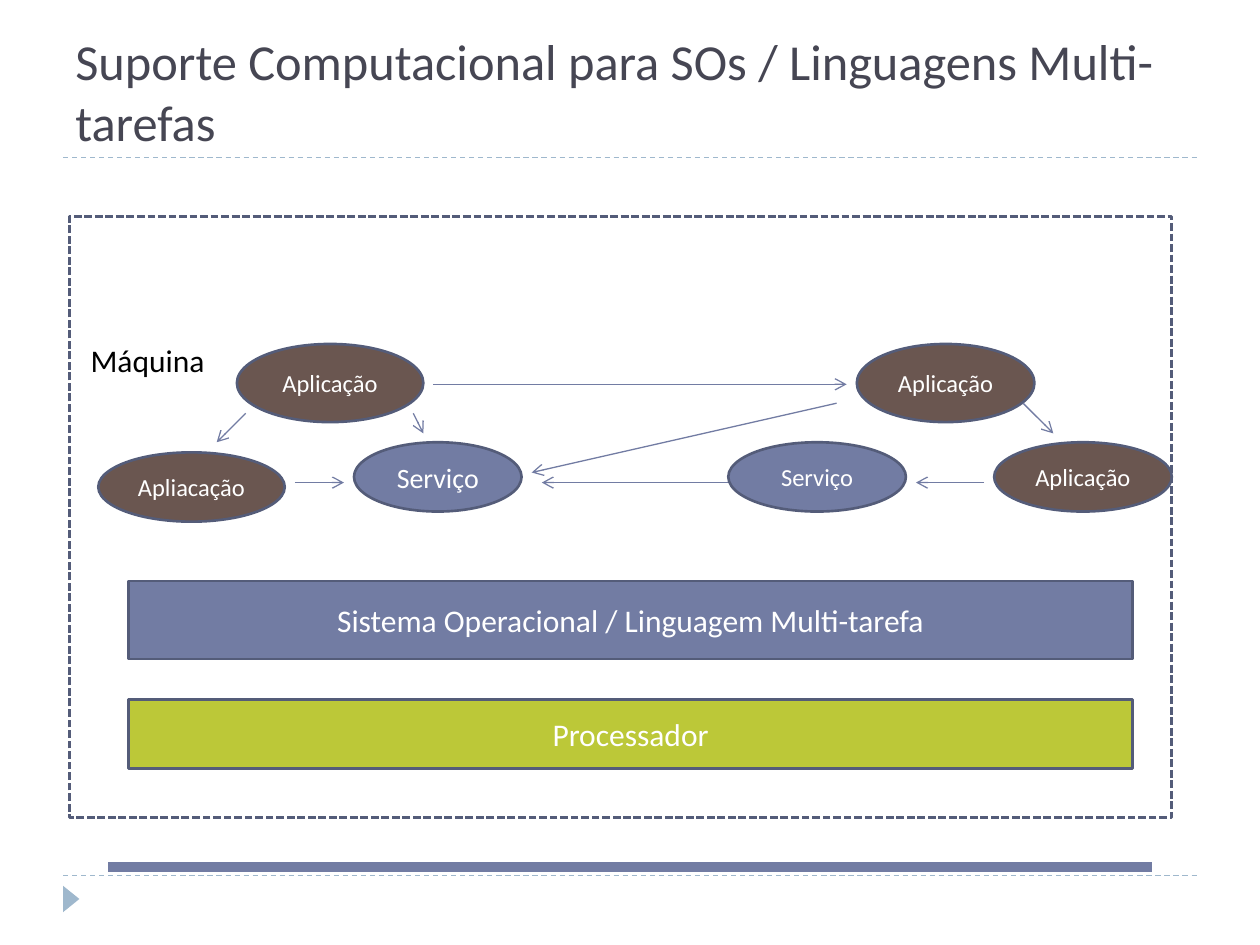
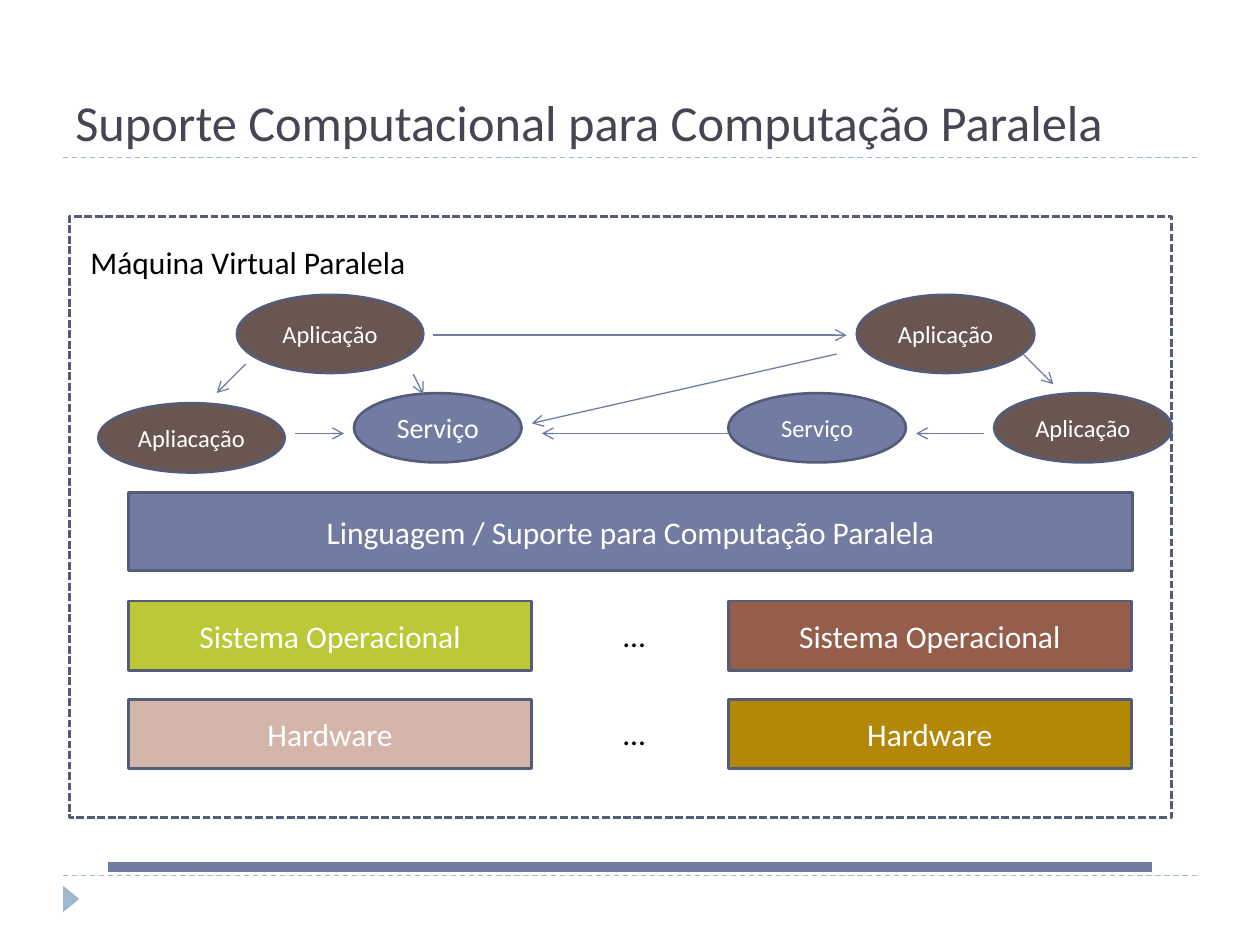
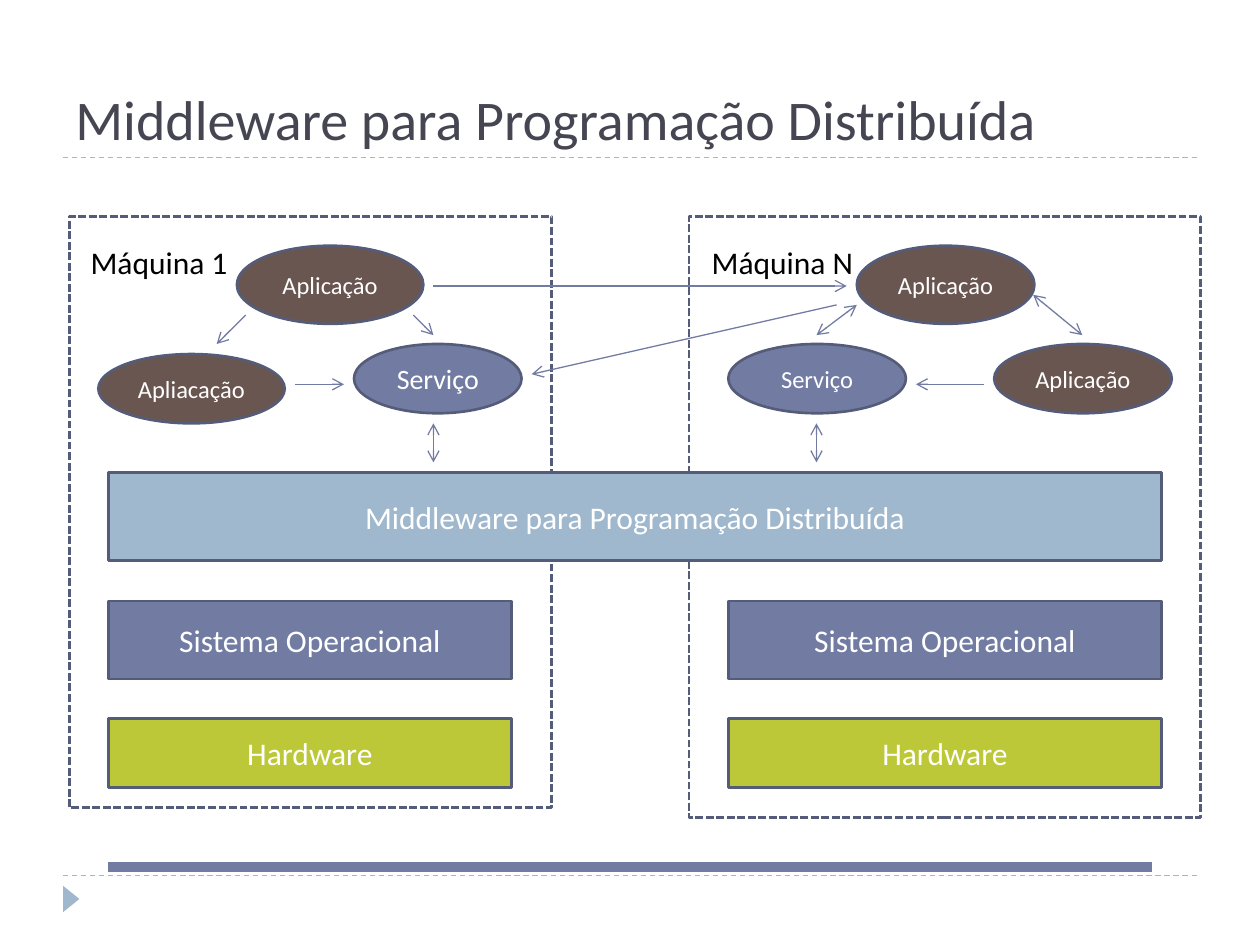
"""Build three slides on computing support for multitasking, parallel and distributed programs."""
from lxml.etree import SubElement
from pptx import Presentation
from pptx.dml.color import RGBColor
from pptx.enum.dml import MSO_LINE_DASH_STYLE as Dash
from pptx.enum.shapes import MSO_CONNECTOR, MSO_SHAPE as Preset
from pptx.enum.text import MSO_ANCHOR as Anchor, PP_ALIGN as Align
from pptx.oxml.ns import qn
from pptx.util import Inches, Pt

FONT = "Calibri"
COLORS = {
    "title": "464653",
    "text": "000000",
    "white": "FFFFFF",
    "outline": "545C79",
    "indigo": "727CA3",
    "sky": "9FB8CD",
    "lime": "BCC838",
    "brown": "6A5650",
    "rose": "D4B5AA",
    "rust": "955E4B",
    "gold": "B38807",
}


def add_box(slide, preset, bounds, fill=None, text="", size=18, color="white",
            outline="outline", dash=None, anchor=Anchor.MIDDLE):
    """Add a preset shape, or a plain text box when preset is None."""
    lengths = [Inches(value) for value in bounds]
    if preset is None:
        shape = slide.shapes.add_textbox(*lengths)
    else:
        shape = slide.shapes.add_shape(preset, *lengths)
        shape.shadow.inherit = False
        shape.fill.solid()
        shape.fill.fore_color.rgb = RGBColor.from_string(COLORS[fill])
        if outline:
            shape.line.color.rgb = RGBColor.from_string(COLORS[outline])
            shape.line.width = Pt(1.5)
            shape.line.dash_style = dash
        else:
            shape.line.fill.background()
    if text:
        frame = shape.text_frame
        frame.word_wrap = True
        frame.vertical_anchor = anchor
        paragraph = frame.paragraphs[0]
        paragraph.alignment = Align.CENTER if preset else Align.LEFT
        run = paragraph.add_run()
        run.text = text
        run.font.name = FONT
        run.font.size = Pt(size)
        run.font.color.rgb = RGBColor.from_string(COLORS[color])
    return shape


def add_line(slide, points, color="indigo", width=0.75, dash=None, ends=()):
    """Add a straight line with open arrowheads at the named ends."""
    connector = slide.shapes.add_connector(
        MSO_CONNECTOR.STRAIGHT, *[Inches(value) for value in points])
    connector.line.color.rgb = RGBColor.from_string(COLORS[color])
    connector.line.width = Pt(width)
    connector.line.dash_style = dash
    for end in ends:
        SubElement(connector.line._get_or_add_ln(), qn(f"a:{end}"), type="arrow")
    SubElement(connector._element.spPr, qn("a:effectLst"))


TAIL = ("tailEnd",)
BOTH = ("headEnd", "tailEnd")

ELLIPSES = [
    ("Aplicação", 1.88, 0, 1.48, 0.62, "brown", 14),
    ("Aplicação", 6.8, 0, 1.41, 0.62, "brown", 14),
    ("Serviço", 5.78, 0.78, 1.41, 0.55, "indigo", 14),
    ("Aplicação", 7.89, 0.78, 1.41, 0.55, "brown", 14),
    ("Apliacação", 0.78, 0.86, 1.48, 0.55, "brown", 14),
    ("Serviço", 2.81, 0.78, 1.33, 0.55, "indigo", 16),
]
SHARED_ARROWS = [
    (1.95, 0.55, 1.72, 0.78, TAIL),
    (2.34, 1.1, 2.73, 1.1, TAIL),
    (3.44, 0.32, 6.72, 0.32, TAIL),
    (6.64, 0.47, 4.22, 1.02, TAIL),
    (7.81, 1.1, 7.27, 1.1, TAIL),
]
SINGLE_MACHINE_ARROWS = [
    (5.78, 1.1, 4.3, 1.1, TAIL),
    (8.12, 0.47, 8.36, 0.71, TAIL),
]

SLIDES = [
    {
        "title": "Suporte Computacional para SOs / Linguagens Multi-tarefas",
        "title_size": 28.8,
        "machines": [(0.55, 1.72, 8.75, 4.77)],
        "layers": [
            ("Processador", (1.02, 5.55, 7.97, 0.55), "lime"),
            ("Sistema Operacional / Linguagem Multi-tarefa", (1.02, 4.61, 7.97, 0.62), "indigo"),
        ],
        "labels": [("Máquina", (0.62, 2.66, 1.48, 0.4))],
        "network_top": 2.73,
        "arrows": SINGLE_MACHINE_ARROWS + [(3.28, 0.55, 3.36, 0.71, TAIL)],
    },
    {
        "title": "Suporte Computacional para Computação Paralela",
        "title_size": 28.8,
        "machines": [(0.55, 1.72, 8.75, 4.77)],
        "layers": [
            ("Linguagem / Suporte para Computação Paralela", (1.02, 3.91, 7.97, 0.62), "indigo"),
            ("Sistema Operacional", (1.02, 4.77, 3.2, 0.55), "lime"),
            ("Sistema Operacional", (5.78, 4.77, 3.2, 0.55), "rust"),
            ("Hardware", (1.02, 5.55, 3.2, 0.55), "rose"),
            ("Hardware", (5.78, 5.55, 3.2, 0.55), "gold"),
        ],
        "labels": [
            ("Máquina Virtual Paralela", (0.62, 1.88, 2.73, 0.4)),
            ("...", (4.84, 4.84, 0.62, 0.4)),
            ("...", (4.84, 5.62, 0.62, 0.4)),
        ],
        "network_top": 2.34,
        "arrows": SINGLE_MACHINE_ARROWS + [(3.28, 0.63, 3.36, 0.79, TAIL)],
    },
    {
        "title": "Middleware para Programação Distribuída",
        "title_size": 32,
        "machines": [(0.55, 1.72, 3.83, 4.69), (5.47, 1.72, 4.06, 4.77)],
        "layers": [
            ("Hardware", (0.86, 5.7, 3.2, 0.55), "lime"),
            ("Hardware", (5.78, 5.7, 3.44, 0.55), "lime"),
            ("Sistema Operacional", (0.86, 4.77, 3.2, 0.62), "indigo"),
            ("Sistema Operacional", (5.78, 4.77, 3.44, 0.62), "indigo"),
            ("Middleware para Programação Distribuída", (0.86, 3.75, 8.36, 0.7), "sky"),
        ],
        "labels": [
            ("Máquina 1", (0.62, 1.88, 1.48, 0.4)),
            ("Máquina N", (5.55, 1.88, 1.33, 0.4)),
        ],
        "network_top": 1.95,
        "arrows": [
            (3.28, 0.55, 3.44, 0.71, TAIL),
            (6.48, 0.71, 6.8, 0.47, BOTH),
            (8.2, 0.39, 8.59, 0.71, BOTH),
            (3.44, 1.41, 3.44, 1.72, BOTH),
            (6.48, 1.41, 6.48, 1.72, BOTH),
        ],
    },
]

presentation = Presentation()
presentation.slide_width = Inches(10)
presentation.slide_height = Inches(7.5)

for content in SLIDES:
    slide = presentation.slides.add_slide(presentation.slide_layouts[6])
    for rule_y in (6.95, 1.25):
        add_line(slide, (0.5, rule_y, 9.5, rule_y), "sky", dash=Dash.DASH)
    marker = add_box(slide, Preset.ISOSCELES_TRIANGLE, (0.46, 7.07, 0.21, 0.13), "sky", outline=None)
    marker.rotation = 90
    add_box(slide, None, (0.5, 0.17, 9, 1.08), text=content["title"],
            size=content["title_size"], color="title", anchor=Anchor.BOTTOM)
    add_line(slide, (0.86, 6.88, 9.14, 6.88), width=6)

    for bounds in content["machines"]:
        add_box(slide, Preset.RECTANGLE, bounds, "white", dash=Dash.SQUARE_DOT)
    for text, bounds, fill in content["layers"]:
        add_box(slide, Preset.RECTANGLE, bounds, fill, text)

    top = content["network_top"]
    for text, left, offset, width, height, fill, size in ELLIPSES:
        add_box(slide, Preset.OVAL, (left, top + offset, width, height), fill, text, size)
    for text, bounds in content["labels"]:
        add_box(slide, None, bounds, text=text, color="text", anchor=Anchor.TOP)
    for start_x, start_y, end_x, end_y, ends in SHARED_ARROWS + content["arrows"]:
        add_line(slide, (start_x, top + start_y, end_x, top + end_y), ends=ends)

presentation.save("out.pptx")
